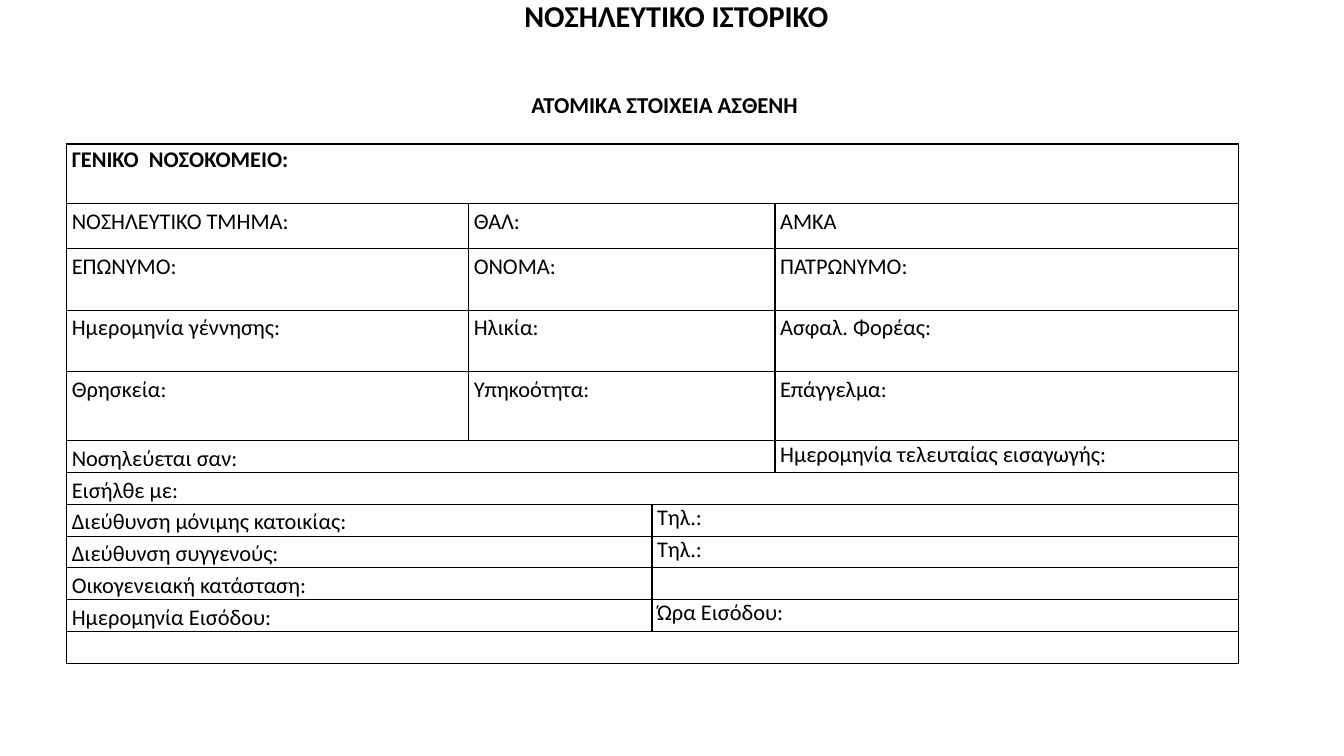
from lxml import etree
from pptx import Presentation
from pptx.dml.color import RGBColor
from pptx.enum.text import MSO_ANCHOR, PP_ALIGN
from pptx.oxml import parse_xml
from pptx.oxml.ns import nsdecls
from pptx.util import Cm, Pt

CENTER = PP_ALIGN.CENTER
MIDDLE = MSO_ANCHOR.MIDDLE
INK = "000000"
BORDER = (
    '<a:{side} {ns} w="12700"><a:solidFill><a:srgbClr val="{ink}"/>'
    '</a:solidFill></a:{side}>'
)


def color(value):
    return RGBColor.from_string(value)


def write(frame, text, size, bold, space):
    para = frame.paragraphs[0]
    para.text = text
    para.line_spacing = space
    style = {"name": "Calibri", "size": Pt(size), "bold": bold}
    for key, value in style.items():
        setattr(para.font, key, value)
    para.font.color.rgb = color(INK)
    return para


deck = Presentation()
deck.slide_width, deck.slide_height = Cm(33.87), Cm(19.05)
slide = deck.slides.add_slide(deck.slide_layouts[6])

# Headings: text, left, top, size
heads = [
    ("ΝΟΣΗΛΕΥΤΙΚΟ ΙΣΤΟΡΙΚΟ", 2.45, 0, 21.6),
    ("ΑΤΟΜΙΚΑ ΣΤΟΙΧΕΙΑ ΑΣΘΕΝΗ", 2.15, 2.22, 16.2),
]
for text, left, top, size in heads:
    box = slide.shapes.add_textbox(Cm(left), Cm(top), Cm(29.2), Cm(0.8))
    frame = box.text_frame
    layout = {
        "word_wrap": True, "vertical_anchor": MIDDLE, "margin_left": 0,
        "margin_right": 0, "margin_top": 0, "margin_bottom": 0,
    }
    for key, value in layout.items():
        setattr(frame, key, value)
    write(frame, text, size, True, 1).alignment = CENTER

# Form rows: each cell is (text, columns spanned, line spacing)
form = [[("ΓΕΝΙΚΟ  ΝΟΣΟΚΟΜΕΙΟ:", 4, 1.07)]]
for first, second, third in [
    ("ΝΟΣΗΛΕΥΤΙΚΟ ΤΜΗΜΑ:", "ΘΑΛ:", "ΑΜΚΑ"),
    ("ΕΠΩΝΥΜΟ:", "ΟΝΟΜΑ:", "ΠΑΤΡΩΝΥΜΟ:"),
    ("Ημερομηνία γέννησης:", "Ηλικία:", "Ασφαλ. Φορέας:"),
    ("Θρησκεία:", "Υπηκοότητα:", "Επάγγελμα:"),
]:
    form.append([(first, 1, 1.15), (second, 2, 1.15), (third, 1, 1.15)])
form.append([
    ("Νοσηλεύεται σαν:", 3, 1.15),
    ("Ημερομηνία τελευταίας εισαγωγής:", 1, 1),
])
form.append([("Εισήλθε με:", 4, 1.15)])
for first, second in [
    ("Διεύθυνση μόνιμης κατοικίας:", "Τηλ.:"),
    ("Διεύθυνση συγγενούς:", "Τηλ.:"),
    ("Οικογενειακή κατάσταση:", ""),
    ("Ημερομηνία Εισόδου:", "Ώρα Εισόδου:"),
]:
    form.append([(first, 2, 1.15), (second, 2, 1)])
form.append([("", 4, 1)])

# Table grid
widths = [10.13, 4.62, 3.1, 11.68]
heights = [1.5, 1.14, 1.55, 1.55, 1.74] + [0.8] * 7
table = slide.shapes.add_table(
    len(heights), len(widths), Cm(1.68), Cm(3.63),
    Cm(sum(widths)), Cm(sum(heights)),
).table
table.first_row = table.horz_banding = False
for col, width in zip(table.columns, widths):
    col.width = Cm(width)
for row, height in zip(table.rows, heights):
    row.height = Cm(height)

# Cell format and borders
inset = {
    "margin_left": Cm(0.13), "margin_right": Cm(0.13),
    "margin_top": 0, "margin_bottom": 0,
}
for cell in table.iter_cells():
    for key, value in inset.items():
        setattr(cell, key, value)
    cell.fill.background()
    props = cell._tc.get_or_add_tcPr()
    for spot, side in enumerate(("lnL", "lnR", "lnT", "lnB")):
        line = BORDER.format(side=side, ns=nsdecls("a"), ink=INK)
        props.insert(spot, parse_xml(line))
    write(cell.text_frame, "", 16, False, 1)

# Cell text and spans
for y, row in enumerate(form):
    x = 0
    for text, span, space in row:
        cell = table.cell(y, x)
        if span > 1:
            cell.merge(table.cell(y, x + span - 1))
        write(cell.text_frame, text, 16, y == 0, space)
        x += span

deck.save("out.pptx")
